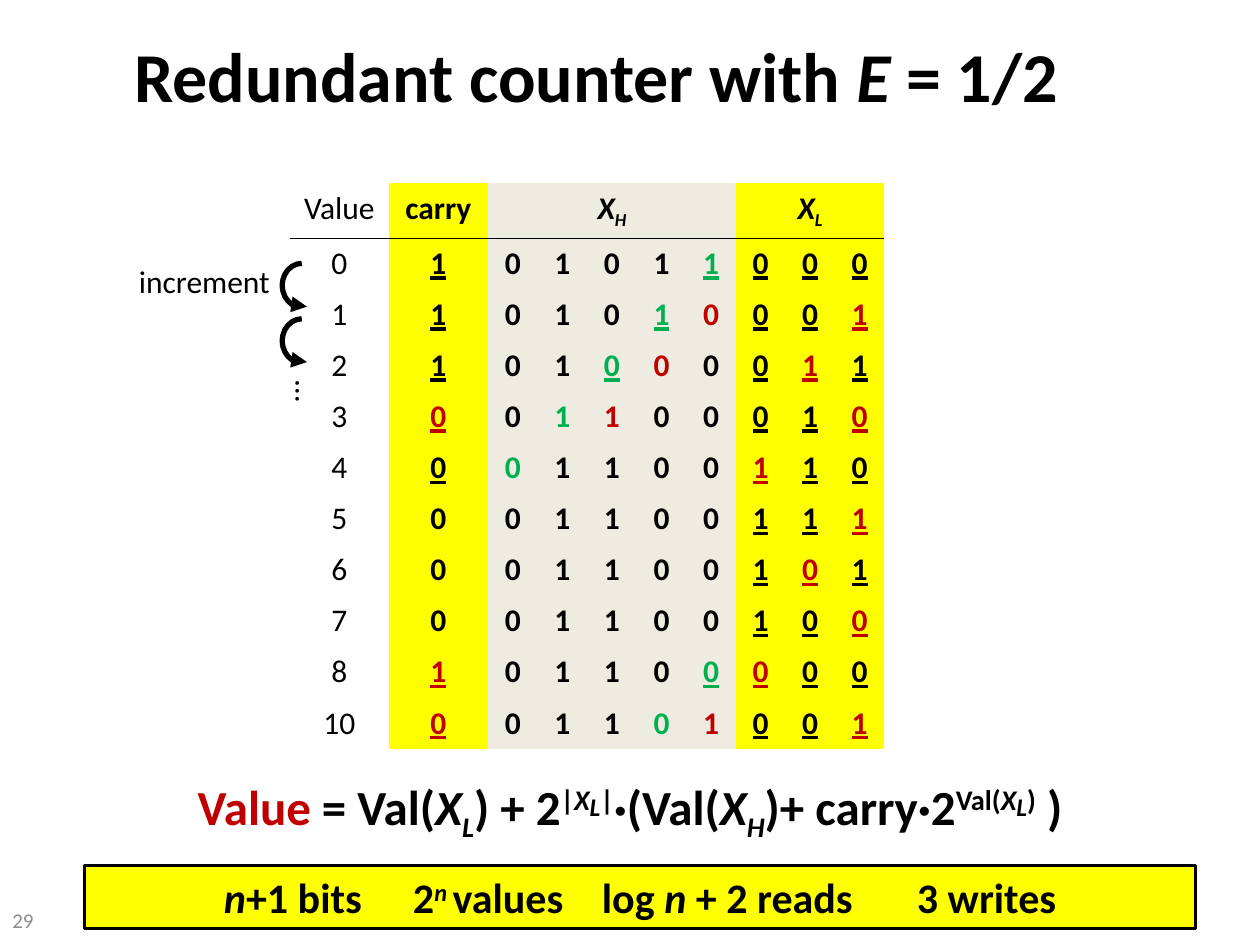
from dataclasses import dataclass

from lxml import etree
from pptx import Presentation
from pptx.dml.color import RGBColor
from pptx.enum.shapes import MSO_SHAPE
from pptx.enum.text import MSO_ANCHOR, MSO_AUTO_SIZE, PP_ALIGN
from pptx.oxml.ns import qn
from pptx.util import Inches, Pt

ARC, RECT = MSO_SHAPE.ARC, MSO_SHAPE.RECTANGLE
LEFT, CENTER, RIGHT = PP_ALIGN.LEFT, PP_ALIGN.CENTER, PP_ALIGN.RIGHT
MIDDLE = MSO_ANCHOR.MIDDLE
GROW = MSO_AUTO_SIZE.SHAPE_TO_FIT_TEXT
NO_GRID_STYLE = "{2D5ABB26-0587-4C30-8999-92F81FD0307C}"

SLIDE_W, SLIDE_H = Inches(10), Inches(7.5)
GRID_COLS, GRID_ROWS = 100, 75


@dataclass(frozen=True)
class Theme:
    font: str = "Calibri"
    black: str = "000000"
    red: str = "C00000"
    green: str = "00B050"
    yellow: str = "FFFF00"
    beige: str = "EEECE1"
    gray: str = "8C8C8C"
    title: int = 40
    formula: int = 28
    nested: int = 25
    summary: int = 24
    body: int = 18
    number: int = 12


THEME = Theme()
BIT_COLORS = {"r": THEME.red, "g": THEME.green}
SUB, SUP, NESTED = -25, 30, 20

COUNTER_ROWS = [
    ("0", "1u 0 1 0 1 1gu 0u 0u 0u"),
    ("1", "1u 0 1 0 1gu 0r 0u 0u 1ru"),
    ("2", "1u 0 1 0gu 0r 0 0u 1ru 1u"),
    ("3", "0ru 0 1g 1r 0 0 0u 1u 0ru"),
    ("4", "0u 0g 1 1 0 0 1ru 1u 0u"),
    ("5", "0 0 1 1 0 0 1u 1u 1ru"),
    ("6", "0 0 1 1 0 0 1u 0ru 1u"),
    ("7", "0 0 1 1 0 0 1u 0u 0ru"),
    ("8", "1ru 0 1 1 0 0gu 0ru 0u 0u"),
    ("10", "0ru 0 1 1 0g 1r 0u 0u 1ru"),
]
FIRST_HIGH, FIRST_LOW, LAST_COL = 2, 7, 9


def grid(x, y, w, h):
    col, row = SLIDE_W / GRID_COLS, SLIDE_H / GRID_ROWS
    return round(x * col), round(y * row), round(w * col), round(h * row)


def place(sp, box):
    sp.left, sp.top, sp.width, sp.height = grid(*box)


def run(text, **style):
    return text, style


def var(text, **style):
    return text, {"italic": True, **style}


def write(tf, runs, size, align=CENTER, color=THEME.black, bold=False):
    p = tf.paragraphs[0]
    p.alignment = align
    for text, style in runs:
        r = p.add_run()
        r.text = text
        font = r.font
        font.name = THEME.font
        font.size = Pt(style.get("size", size))
        font.bold = bold
        font.italic = style.get("italic", False)
        font.underline = style.get("underline", False)
        font.color.rgb = RGBColor.from_string(style.get("color", color))
        if "base" in style:
            r._r.get_or_add_rPr().set("baseline", str(style["base"] * 1000))


def add_title(slide, box, runs):
    sp = slide.shapes.title
    place(sp, box)
    sp.text_frame.auto_size = GROW
    write(sp.text_frame, runs, THEME.title, bold=True)


def add_text(slide, box, runs, size, rotation=0, anchor=None, **style):
    sp = slide.shapes.add_textbox(*grid(*box))
    sp.rotation = rotation
    tf = sp.text_frame
    tf.word_wrap = True
    if anchor is None:
        tf.auto_size = GROW
    else:
        tf.vertical_anchor = anchor
    write(tf, runs, size, **style)


def add_arc_arrow(slide, box):
    sp = slide.shapes.add_shape(ARC, *grid(*box))
    sp.shadow.inherit = False
    sp.fill.background()
    sp.line.color.rgb = RGBColor.from_string(THEME.black)
    sp.line.width = Pt(3)
    sp.adjustments[0], sp.adjustments[1] = 162, 62.3
    sp._element.spPr.get_or_add_xfrm().set("flipH", "1")
    ln = sp.line._get_or_add_ln()
    etree.SubElement(ln, qn("a:tailEnd")).set("type", "triangle")


def add_bar(slide, box, runs):
    sp = slide.shapes.add_shape(RECT, *grid(*box))
    sp.shadow.inherit = False
    sp.fill.solid()
    sp.fill.fore_color.rgb = RGBColor.from_string(THEME.yellow)
    sp.line.color.rgb = RGBColor.from_string(THEME.black)
    sp.line.width = Pt(1.5)
    write(sp.text_frame, runs, THEME.summary, bold=True)


def underline_cell(cell):
    ln = etree.Element(qn("a:lnB"), w=str(Pt(1)))
    fill = etree.SubElement(ln, qn("a:solidFill"))
    etree.SubElement(fill, qn("a:srgbClr")).set("val", THEME.black)
    cell._tc.get_or_add_tcPr().insert(0, ln)


def bit_run(token):
    color = next((c for flag, c in BIT_COLORS.items() if flag in token), THEME.black)
    return run(token[0], color=color, underline="u" in token)


def fill_cell(cell, col):
    if col == 0:
        cell.fill.background()
        return
    color = THEME.beige if FIRST_HIGH <= col < FIRST_LOW else THEME.yellow
    cell.fill.solid()
    cell.fill.fore_color.rgb = RGBColor.from_string(color)


def add_counter_table(slide, box):
    header = {
        0: [run("Value")],
        1: [run("carry")],
        FIRST_HIGH: [var("X"), var("H", base=SUB)],
        FIRST_LOW: [var("X"), var("L", base=SUB)],
    }
    rows = [header] + [
        dict(enumerate([[run(value)]] + [[bit_run(t)] for t in bits.split()]))
        for value, bits in COUNTER_ROWS
    ]
    frame = slide.shapes.add_table(len(rows), LAST_COL + 1, *grid(*box))
    table = frame.table
    table.first_row = table.horz_banding = False
    table._tbl.tblPr.find(qn("a:tableStyleId")).text = NO_GRID_STYLE
    unit = frame.width // 12
    for i, column in enumerate(table.columns):
        column.width = unit * (2 if i < FIRST_HIGH else 1)
    for r, contents in enumerate(rows):
        for c in range(LAST_COL + 1):
            cell = table.cell(r, c)
            fill_cell(cell, c)
            if r == 0:
                underline_cell(cell)
            if c in contents:
                write(cell.text_frame, contents[c], THEME.body, bold=c > 0)
    for first, last in ((FIRST_HIGH, FIRST_LOW - 1), (FIRST_LOW, LAST_COL)):
        table.cell(0, first).merge(table.cell(0, last))


def main():
    prs = Presentation()
    prs.slide_width, prs.slide_height = SLIDE_W, SLIDE_H
    slide = prs.slides.add_slide(prs.slide_layouts[5])

    add_counter_table(slide, (23, 14.5, 47.2, 44.6))
    add_title(slide, (2, 2.1, 90.6, 7.7),
              [run("Redundant counter with "), var("E"), run(" = 1/2")])
    for step in range(2):
        add_arc_arrow(slide, (22.4, 20.9 + 4.4 * step, 3.1, 3.5))
    add_text(slide, (3.5, 20.3, 18.9, 4), [run("increment")], THEME.body, align=RIGHT)
    add_text(slide, (22.1, 29.6, 4.7, 4), [run("…")], THEME.body, rotation=90, align=LEFT)

    nested_low = [var("X", base=SUP), var("L", base=NESTED, size=THEME.nested)]
    add_text(slide, (0, 61.1, 100, 5.7), [
        run("Value", color=THEME.red), run(" = Val("), var("X"), var("L", base=SUB),
        run(") + 2"), run("|", base=SUP), *nested_low, run("|", base=SUP),
        run("·(Val("), var("X"), var("H", base=SUB), run(")+ carry·2"),
        run("Val(", base=SUP), *nested_low, run(")", base=SUP), run(" )"),
    ], THEME.formula, bold=True)
    add_bar(slide, (6.7, 68.7, 88.2, 5), [
        var("n"), run("+1 bits\t2"), var("n ", base=SUP), run("values\tlog "),
        var("n"), run(" + 2 reads\t\t3 writes"),
    ])
    add_text(slide, (0, 71, 23.3, 4), [run("29")], THEME.number,
             anchor=MIDDLE, align=LEFT, color=THEME.gray)
    prs.save("out.pptx")


if __name__ == "__main__":
    main()
